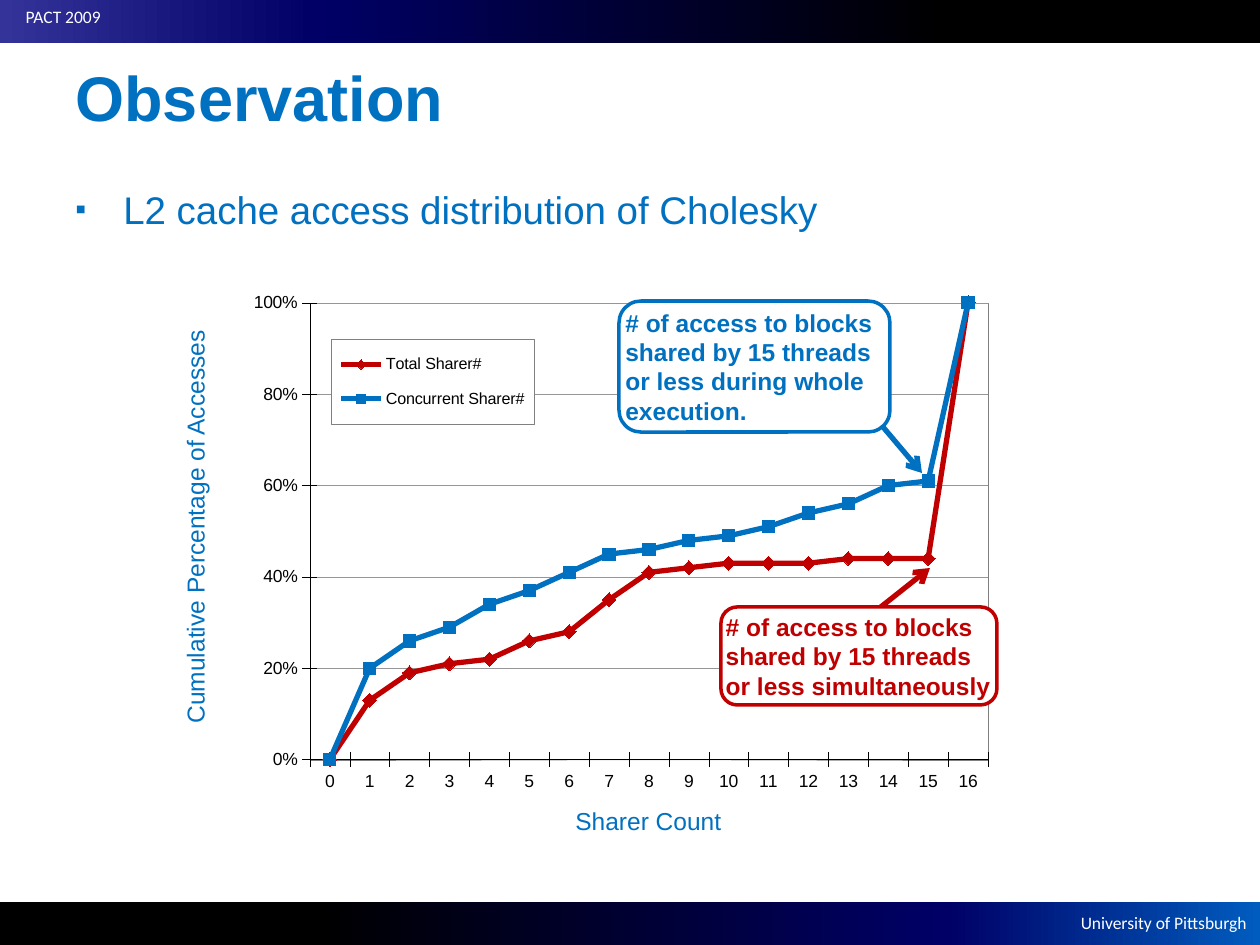
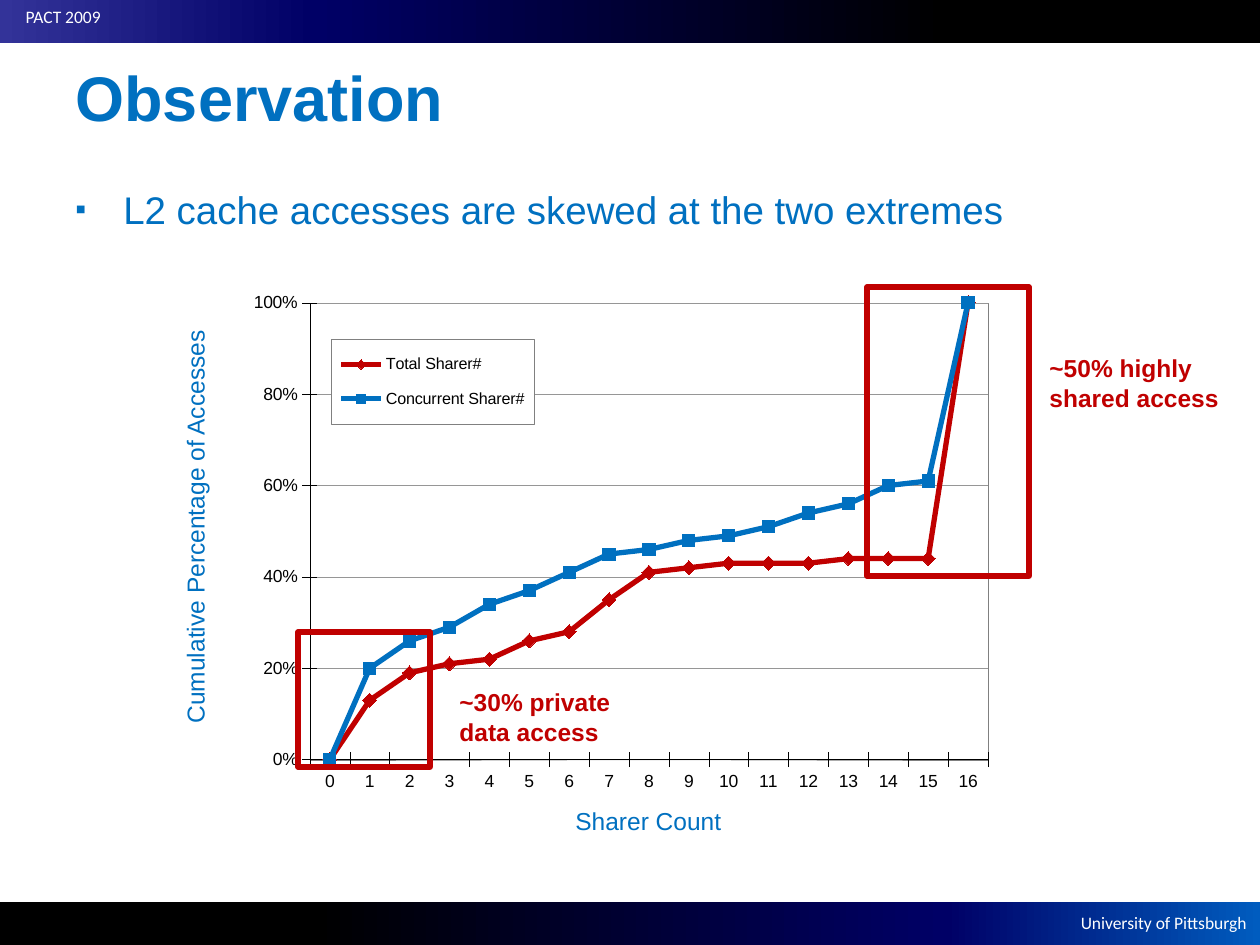
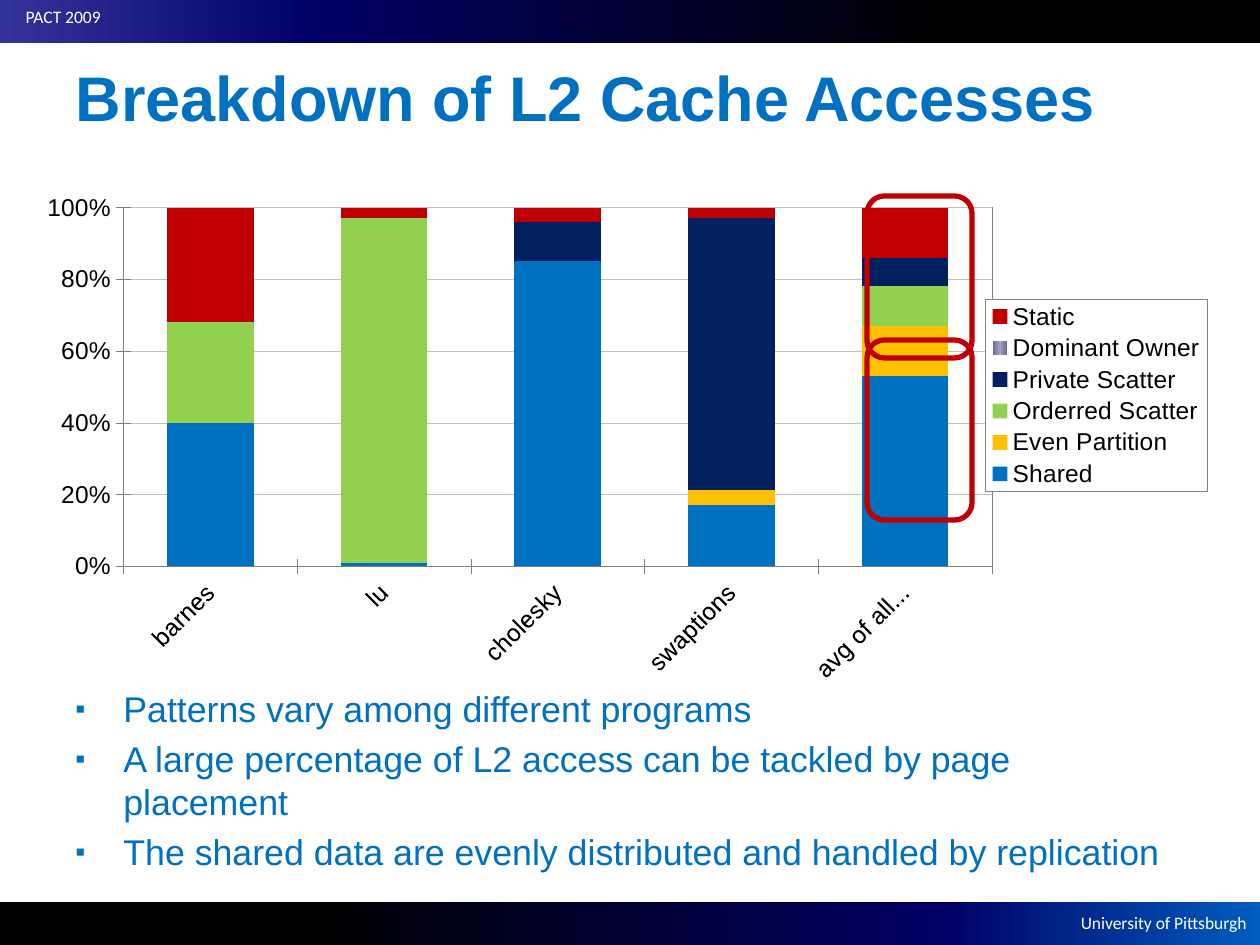
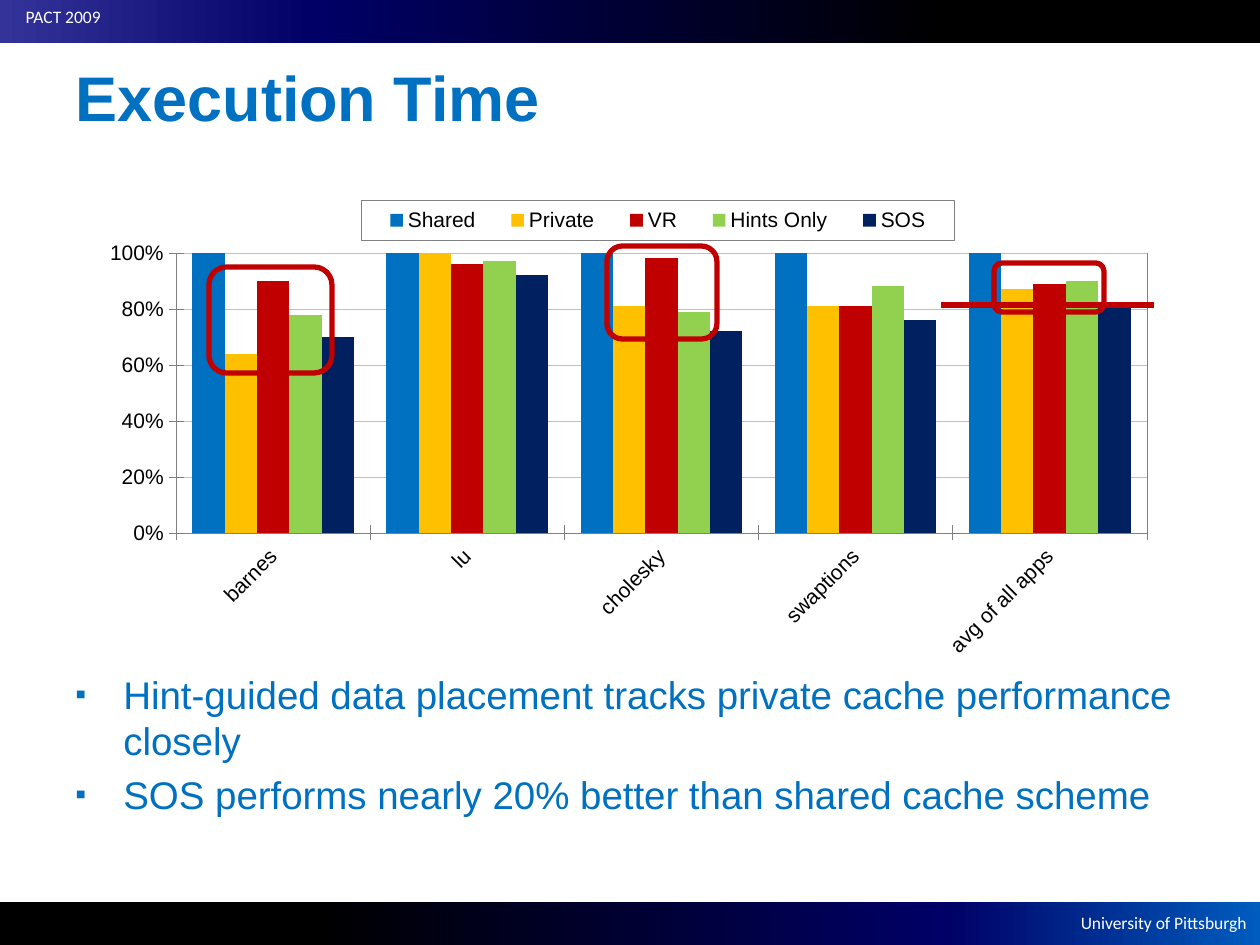
from lxml import etree
from pptx import Presentation
from pptx.chart.data import CategoryChartData
from pptx.dml.color import RGBColor
from pptx.enum.chart import (XL_CHART_TYPE, XL_LEGEND_POSITION,
                             XL_MARKER_STYLE, XL_TICK_MARK)
from pptx.enum.shapes import MSO_CONNECTOR, MSO_SHAPE
from pptx.enum.text import MSO_ANCHOR, PP_ALIGN
from pptx.oxml import parse_xml
from pptx.oxml.ns import nsdecls, qn
from pptx.util import Emu, Pt

RECT, ROUND = MSO_SHAPE.RECTANGLE, MSO_SHAPE.ROUNDED_RECTANGLE
LEFT, RIGHT = PP_ALIGN.LEFT, PP_ALIGN.RIGHT
TOP, MIDDLE = MSO_ANCHOR.TOP, MSO_ANCHOR.MIDDLE
LINES = XL_CHART_TYPE.LINE_MARKERS
STACKED = XL_CHART_TYPE.COLUMN_STACKED_100
COLUMNS = XL_CHART_TYPE.COLUMN_CLUSTERED
MARKS = [(XL_MARKER_STYLE.DIAMOND, 8), (XL_MARKER_STYLE.SQUARE, 7)]

# Shared look
WIDTH, HEIGHT, PX = 1260, 945, 914400 / 126
BLUE, RED, GOLD, GREEN, NAVY = "0070C0", "C00000", "FFC000", "92D050", "002060"
BLACK, WHITE, GREY, PALE, MID = "000000", "FFFFFF", "808080", "C0C0C0", "969696"
HEAD = [(0, "333399"), (25, "000066"), (75, BLACK), (100, BLACK)]
FOOT = [(0, BLACK), (25, BLACK), (75, "000066"), (100, "005CBF")]
STEEL = [(0, "666699"), (50, "A2A2BB"), (100, "666699")]

# Chart data
APPS = ["barnes", "lu", "cholesky", "swaptions", "avg of all apps"]
SHARERS = [
    ("Total Sharer#", RED, [0, 0.13, 0.19, 0.21, 0.22, 0.26, 0.28, 0.35, 0.41,
                            0.42, 0.43, 0.43, 0.43, 0.44, 0.44, 0.44, 1]),
    ("Concurrent Sharer#", BLUE, [0, 0.2, 0.26, 0.29, 0.34, 0.37, 0.41, 0.45,
                                  0.46, 0.48, 0.49, 0.51, 0.54, 0.56, 0.6,
                                  0.61, 1]),
]
ACCESS = [
    ("Shared", BLUE, [40, 1, 85, 17, 53]),
    ("Even Partition", GOLD, [0, 0, 0, 4, 14]),
    ("Orderred Scatter", GREEN, [28, 96, 0, 0, 11]),
    ("Private Scatter", NAVY, [0, 0, 11, 75, 8]),
    ("Dominant Owner", STEEL, [0, 0, 0, 0, 0]),
    ("Static", RED, [32, 3, 4, 3, 14]),
]
TIMES = [
    ("Shared", BLUE, [1, 1, 1, 1, 1]),
    ("Private", GOLD, [0.64, 1.08, 0.81, 0.81, 0.87]),
    ("VR", RED, [0.9, 0.96, 0.98, 0.81, 0.89]),
    ("Hints Only", GREEN, [0.78, 0.97, 0.79, 0.88, 0.9]),
    ("SOS", NAVY, [0.7, 0.92, 0.72, 0.76, 0.81]),
]


def px(*nums):
    return [Emu(round(n * PX)) for n in nums]


def rgb(color):
    return RGBColor.from_string(color)


def style(font, size, color, bold=False, name="Arial"):
    font.size, font.bold, font.name = Pt(size), bold, name
    font.color.rgb = rgb(color)


def stroke(line, color, width):
    line.color.rgb = rgb(color)
    line.width = Pt(width)


def paint(fill, color, root):
    """Fill with one colour, or with a list of gradient stops."""
    if isinstance(color, str):
        fill.solid()
        fill.fore_color.rgb = rgb(color)
        return
    fill.gradient()
    fill.gradient_angle = 0
    stops = next(root.iter(qn("a:gsLst")))
    for stop in list(stops):
        stops.remove(stop)
    for pos, tint in color:
        stop = etree.SubElement(stops, qn("a:gs"), pos=str(pos * 1000))
        etree.SubElement(stop, qn("a:srgbClr"), val=tint)


# Text and shapes
def write(frame, lines, size, color, bold=False, align=LEFT, anchor=TOP,
          name="Arial"):
    frame.text = "\n".join(lines)
    frame.vertical_anchor = anchor
    for para in frame.paragraphs:
        para.alignment = align
        style(para.font, size, color, bold, name)


def label(slide, box, lines, size=14, color=BLUE, bold=False, **look):
    text = slide.shapes.add_textbox(*px(*box))
    text.text_frame.word_wrap = False
    write(text.text_frame, lines, size, color, bold, **look)
    return text


def bullets(slide, top, lines, size=22):
    frame = slide.shapes.add_textbox(*px(63, top, 1134, 860 - top)).text_frame
    frame.word_wrap = True
    frame.text = "\n".join(lines)
    for i, para in enumerate(frame.paragraphs):
        props = para._p.get_or_add_pPr()
        props.set("marL", str(px(48)[0]))
        props.set("indent", str(px(-48)[0]))
        tint = etree.SubElement(props, qn("a:buClr"))
        etree.SubElement(tint, qn("a:srgbClr"), val=BLUE)
        etree.SubElement(props, qn("a:buSzPct"), val="80000")
        etree.SubElement(props, qn("a:buFont"), typeface="Arial")
        etree.SubElement(props, qn("a:buChar"), char="▪")
        if i:
            para.space_before = Pt(4)
        style(para.font, size, BLUE)


def block(slide, kind, box, color=None):
    shape = slide.shapes.add_shape(kind, *px(*box))
    shape.shadow.inherit = False
    if color:
        paint(shape.fill, color, shape.element)
    else:
        shape.fill.background()
    return shape


def frame(slide, kind, box):
    stroke(block(slide, kind, box).line, RED, 3)


def link(slide, ends, color, arrow=False):
    line = slide.shapes.add_connector(MSO_CONNECTOR.STRAIGHT, *px(*ends))
    stroke(line.line, color, 3)
    props = line.element.spPr
    if arrow:
        etree.SubElement(props.find(qn("a:ln")), qn("a:tailEnd"), type="arrow")
    etree.SubElement(props, qn("a:effectLst"))


def callout(slide, box, ends, lines, color):
    link(slide, ends, color, arrow=True)
    shape = block(slide, ROUND, box, WHITE)
    stroke(shape.line, color, 2)
    text = shape.text_frame
    text.word_wrap = True
    text.margin_left = text.margin_right = 0
    text.margin_top = text.margin_bottom = 0
    write(text, lines, 14, color, bold=True, anchor=MIDDLE)


def bands(slide, layout):
    """Draw the head and foot bands and hand them to the layout."""
    start = len(slide.shapes)
    for top, height, stops in [(902, 43, FOOT), (0, 43, HEAD)]:
        block(slide, RECT, (0, top, WIDTH, height), stops).line.fill.background()
    for box, text in [((1050, 906, 209, 34), "University of Pittsburgh"),
                      ((0, 0, 113, 34), "PACT 2009")]:
        label(slide, box, [text], 10, WHITE, align=RIGHT, name="Calibri")
    for shape in list(slide.shapes)[start:]:
        layout.shapes.element.append(shape.element)


def page(deck, title):
    slide = deck.slides.add_slide(deck.slide_layouts[5])
    head = slide.shapes.title
    head.left, head.top, head.width, head.height = px(63, 18, 1134, 157)
    write(head.text_frame, [title], 36, BLUE, bold=True, anchor=MIDDLE)
    return slide


# Charts
def place(x, y, w, h, inner=False):
    target = '<c:layoutTarget val="inner"/>' if inner else ""
    return parse_xml(
        f'<c:layout {nsdecls("c")}><c:manualLayout>{target}'
        '<c:xMode val="edge"/><c:yMode val="edge"/>'
        f'<c:x val="{x}"/><c:y val="{y}"/><c:w val="{w}"/><c:h val="{h}"/>'
        '</c:manualLayout></c:layout>')


def border(color, fill):
    return parse_xml(
        f'<c:spPr {nsdecls("c", "a")}>{fill}<a:ln w="3175"><a:solidFill>'
        f'<a:srgbClr val="{color}"/></a:solidFill></a:ln></c:spPr>')


def graph(slide, kind, box, cats, rows, size, area, key, key_size,
          axis_color=GREY, grid=PALE):
    data = CategoryChartData()
    data.categories = cats
    for name, _, vals in rows:
        data.add_series(name, vals)
    chart = slide.shapes.add_chart(kind, *px(*box), data).chart
    chart.has_title = False
    style(chart.font, size, BLACK)

    # Axes
    for axis in (chart.category_axis, chart.value_axis):
        axis.major_tick_mark = XL_TICK_MARK.CROSS
        axis.minor_tick_mark = XL_TICK_MARK.NONE
        stroke(axis.format.line, axis_color, 0.25)
        style(axis.tick_labels.font, size, BLACK)
    chart.category_axis.has_major_gridlines = False
    axis = chart.value_axis
    axis.minimum_scale, axis.maximum_scale, axis.major_unit = 0, 1, 0.2
    axis.has_major_gridlines = True
    stroke(axis.major_gridlines.format.line, grid, 0.25)
    axis.tick_labels.number_format = "0%"
    axis.tick_labels.number_format_is_linked = False

    # Legend and plot area, each with one layout of its own
    chart.has_legend = True
    chart.legend.position = XL_LEGEND_POSITION.RIGHT
    chart.legend.include_in_layout = False
    style(chart.legend.font, key_size, BLACK)
    legend = next(chart.element.iter(qn("c:legend")))
    inside = next(chart.element.iter(qn("c:plotArea")))
    for part in (legend, inside):
        for old in part.findall(qn("c:layout")):
            part.remove(old)
    legend.find(qn("c:legendPos")).addnext(place(*key))
    white = f'<a:solidFill><a:srgbClr val="{WHITE}"/></a:solidFill>'
    legend.find(qn("c:overlay")).addnext(border(GREY, white))
    inside.insert(0, place(*area, inner=True))
    inside.append(border(GREY, "<a:noFill/>"))
    chart.plots[0].vary_by_categories = False
    return chart


def curves(slide):
    chart = graph(slide, LINES, (226, 275, 769, 546),
                  [str(n) for n in range(17)], SHARERS, 10,
                  (0.109, 0.051, 0.882, 0.837), (0.137, 0.118, 0.264, 0.155),
                  9.2, BLACK, MID)
    for line, (_, color, _), (mark, size) in zip(chart.series, SHARERS, MARKS):
        line.smooth = False
        stroke(line.format.line, color, 3)
        line.marker.style, line.marker.size = mark, size
        paint(line.marker.format.fill, color, None)
        stroke(line.marker.format.line, color, 0.75)
    side = label(slide, (174, 328, 55, 408), ["Cumulative Percentage of Accesses"])
    side.element.txBody.bodyPr.set("vert", "vert270")
    label(slide, (563, 800, 200, 55), ["Sharer Count"])


def bars(slide, kind, box, rows, size, area, key, overlap):
    chart = graph(slide, kind, box, APPS, rows, size, area, key, size)
    plot = chart.plots[0]
    plot.gap_width, plot.overlap = 100, overlap
    for bar, (_, color, _) in zip(plot.series, rows):
        paint(bar.format.fill, color, chart.element)
    names = next(chart.element.iter(qn("c:catAx")))
    turn = names.find(qn("c:txPr")).find(qn("a:bodyPr"))
    turn.set("rot", "-2700000")
    turn.set("vert", "horz")


# Slides
def callouts(deck):
    slide = page(deck, "Observation")
    bands(slide, slide.slide_layout)
    bullets(slide, 180, ["L2 cache access distribution of Cholesky"])
    curves(slide)
    callout(slide, (619, 301, 271, 131), (883, 427, 922, 473),
            ["# of access to blocks shared by 15 threads or less during "
             "whole execution."], BLUE)
    callout(slide, (721, 607, 276, 98), (877, 610, 930, 568),
            ["# of access to blocks",
             "shared by 15 threads or less simultaneously"], RED)


def extremes(deck):
    slide = page(deck, "Observation")
    bullets(slide, 180, ["L2 cache accesses are skewed at the two extremes"])
    curves(slide)
    frame(slide, RECT, (867, 287, 162, 289))
    frame(slide, RECT, (298, 632, 132, 135))
    label(slide, (1037, 347, 195, 72), ["~50% highly", "shared access"],
          color=RED, bold=True)
    label(slide, (447, 681, 181, 72), ["~30% private", "data access"],
          color=RED, bold=True)


def breakdown(deck):
    slide = page(deck, "Breakdown of L2 Cache Accesses")
    bars(slide, STACKED, (45, 193, 1172, 490), ACCESS, 14,
         (0.067, 0.03, 0.741, 0.735), (0.802, 0.217, 0.19, 0.395), 100)
    bullets(slide, 681, [
        "Patterns vary among different programs",
        "A large percentage of L2 access can be tackled by page placement",
        "The shared data are evenly distributed and handled by replication",
    ], 20.4)
    for top, height in [(196, 162), (340, 180)]:
        frame(slide, ROUND, (867, top, 105, height))


def timing(deck):
    slide = page(deck, "Execution Time")
    bullets(slide, 665, [
        "Hint-guided data placement tracks private cache performance closely",
        "SOS performs nearly 20% better than shared cache scheme",
    ])
    bars(slide, COLUMNS, (94, 189, 1053, 488), TIMES, 12,
         (0.078, 0.131, 0.922, 0.574), (0.254, 0.023, 0.563, 0.082), 0)
    for box in [(209, 267, 123, 106), (607, 246, 110, 93), (994, 263, 110, 49)]:
        frame(slide, ROUND, box)
    link(slide, (1154, 305, 941, 305), RED)


def main():
    deck = Presentation()
    deck.slide_width, deck.slide_height = px(WIDTH, HEIGHT)
    for build in (callouts, extremes, breakdown, timing):
        build(deck)
    deck.save("out.pptx")


if __name__ == "__main__":
    main()
